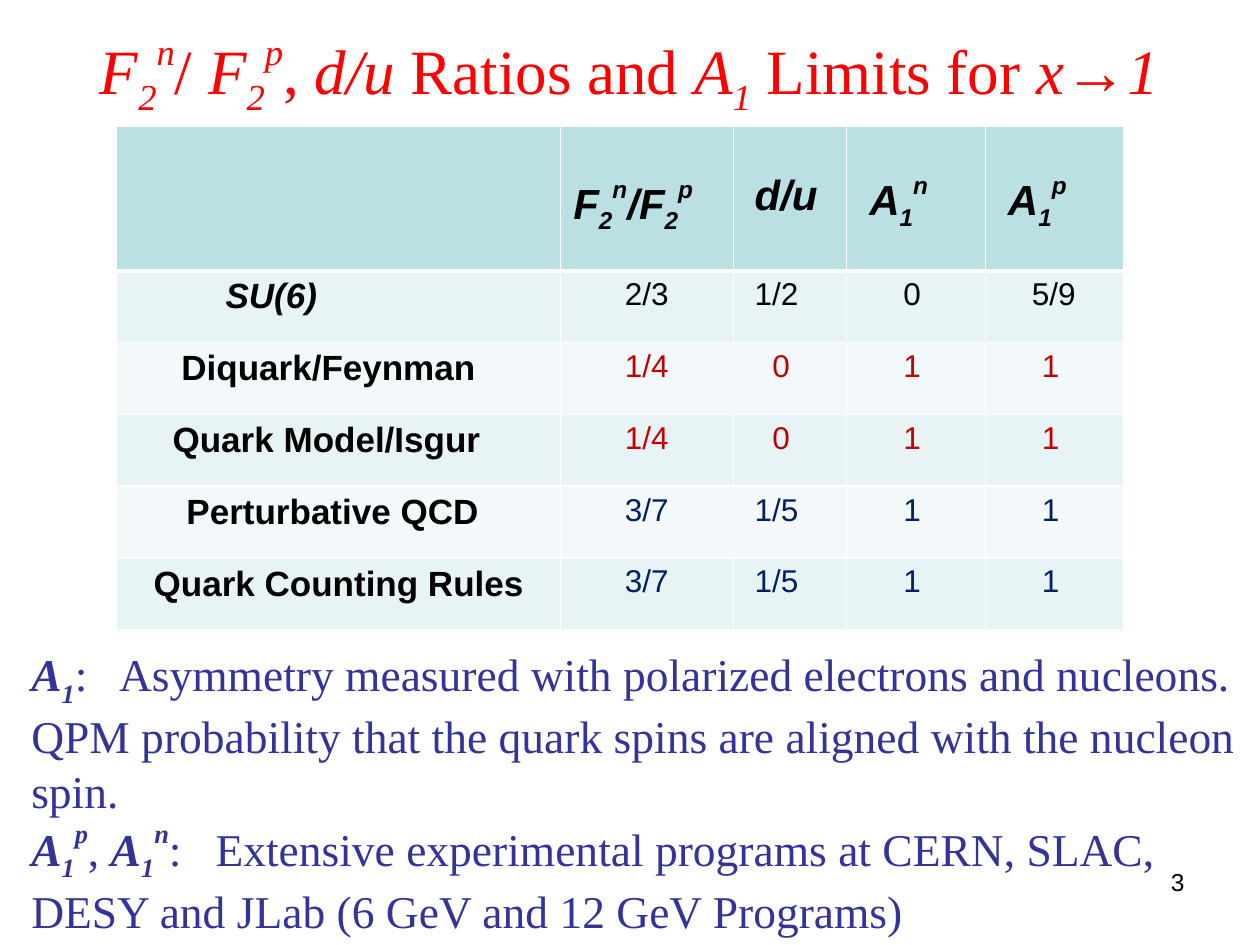
from lxml import etree
from pptx import Presentation
from pptx.dml.color import RGBColor
from pptx.enum.text import MSO_ANCHOR, MSO_AUTO_SIZE, PP_ALIGN
from pptx.oxml.ns import qn
from pptx.util import Inches, Pt

MIDDLE, TOP = MSO_ANCHOR.MIDDLE, MSO_ANCHOR.TOP
LEFT, CENTER, RIGHT = PP_ALIGN.LEFT, PP_ALIGN.CENTER, PP_ALIGN.RIGHT
NO_AUTOFIT = MSO_AUTO_SIZE.NONE
TITLE_ONLY = 5
SERIF, SANS = "Times New Roman", "Arial"
BLACK, WHITE, RED, VIOLET = "000000", "FFFFFF", "FF0000", "333399"
CRIMSON, NAVY = "C00000", "002060"
HEADER_FILL, BANDS = "BBE0E3", ("E7F3F4", "F3F9FA")


def color(value):
    return RGBColor.from_string(value)


def symbol(letter, sub="", sup="", raise_by=50):
    """Spans (text, emphasised, baseline %) of a letter with its indices."""
    spans = [(letter, True, 0), (sub, True, -25), (sup, True, raise_by)]
    return [span for span in spans if span[0]]


def plain(text):
    return [(text, False, 0)]


class SlideBuilder:
    def __init__(self, deck):
        self.slide = deck.slides.add_slide(deck.slide_layouts[TITLE_ONLY])

    def fill_para(self, para, spans, size, font, ink, align=LEFT, bold=False):
        """Fill a paragraph; emphasised spans are italic, and bold if asked."""
        para.alignment = align
        para.font.size, para.font.name = Pt(size), font
        para.font.color.rgb = color(ink)
        for text, emphasised, baseline in spans:
            span = para.add_run()
            span.text = text
            span.font.italic = emphasised
            span.font.bold = bold and emphasised
            if baseline:
                span.font._element.set("baseline", str(baseline * 1000))

    def title(self, area, spans):
        box = self.slide.shapes.title
        box.left, box.top, box.width, box.height = map(Inches, area)
        frame = box.text_frame
        frame.word_wrap, frame.vertical_anchor = True, MIDDLE
        frame.auto_size = NO_AUTOFIT
        self.fill_para(frame.paragraphs[0], spans, 36, SERIF, RED, CENTER)

    def text(self, area, paragraphs, size, font, ink, align=LEFT):
        frame = self.slide.shapes.add_textbox(*map(Inches, area)).text_frame
        frame.word_wrap, frame.vertical_anchor = True, TOP
        for index, spans in enumerate(paragraphs):
            para = frame.add_paragraph() if index else frame.paragraphs[0]
            self.fill_para(para, spans, size, font, ink, align, bold=True)

    def table(self, left, top, widths, heights):
        area = map(Inches, (left, top, sum(widths), sum(heights)))
        table = self.slide.shapes.add_table(len(heights), len(widths), *area).table
        table.first_row = table.horz_banding = False
        for column, width in zip(table.columns, widths):
            column.width = Inches(width)
        for row, height in zip(table.rows, heights):
            row.height = Inches(height)
        return table

    def cell(self, cell, fill, edges):
        """Set the fill and the white edges (left, right, top, bottom, in points)."""
        properties = cell._tc.get_or_add_tcPr()
        for side, width in zip("LRTB", edges):
            line = etree.SubElement(properties, qn(f"a:ln{side}"), w=str(Pt(width)))
            solid = etree.SubElement(line, qn("a:solidFill"))
            etree.SubElement(solid, qn("a:srgbClr"), val=WHITE)
        cell.fill.solid()
        cell.fill.fore_color.rgb = color(fill)

    def cell_text(self, cell, spans, size, ink=BLACK, indent=0.1, drop=0.05, bold=False):
        cell.margin_left, cell.margin_top = Inches(indent), Inches(drop)
        cell.margin_right = 0
        para = cell.text_frame.paragraphs[0]
        self.fill_para(para, spans, size, SANS, ink, bold=True)
        if bold:
            for span in para.runs:
                span.font.bold = True


def main():
    deck = Presentation()
    deck.slide_width, deck.slide_height = Inches(10), Inches(7.5)
    page = SlideBuilder(deck)

    # Title
    page.title((0.33, 0.17, 9.33, 0.83), [
        *symbol("F", "2", "n", 46), *plain("/"), *symbol(" F", "2", "p", 46),
        *plain(", "), *symbol("d/u"), *plain(" Ratios and "), *symbol("A", "1"),
        *plain(" Limits for "), *symbol("x"), *plain("→"), *symbol("1")])

    # Table: header spans with indent and drop, rows with label indent
    headers = [
        ([], 0.1, 0.05),
        (symbol("F", "2", "n") + symbol("/F", "2", "p"), 0.1, 0.4),
        (symbol("d/u"), 0.17, 0.37),
        (symbol("A", "1", "n"), 0.18, 0.37),
        (symbol("A", "1", "p"), 0.18, 0.37)]
    rows = [
        (symbol("SU(6)"), 0.87, BLACK, ("2/3", "1/2", "0", "5/9")),
        (plain("Diquark/Feynman"), 0.52, CRIMSON, ("1/4", "0", "1", "1")),
        (plain("Quark Model/Isgur"), 0.45, CRIMSON, ("1/4", "0", "1", "1")),
        (plain("Perturbative QCD"), 0.56, NAVY, ("3/7", "1/5", "1", "1")),
        (plain("Quark Counting Rules"), 0.3, NAVY, ("3/7", "1/5", "1", "1"))]
    # Value indents per column, for fractions and for single digits
    fraction_indents = (0.51, 0.17, 0.37, 0.37)
    digit_indents = (0.58, 0.31, 0.45, 0.45)

    table = page.table(0.92, 1, (3.53, 1.37, 0.9, 1.1, 1.1), [1.15] + [0.57] * len(rows))
    for column, (spans, indent, drop) in enumerate(headers):
        cell = table.cell(0, column)
        page.cell(cell, HEADER_FILL, (1, 1, 1, 3))
        page.cell_text(cell, spans, 24, indent=indent, drop=drop)
    for index, (label, label_indent, ink, values) in enumerate(rows):
        label_cell, *value_cells = table.rows[index + 1].cells
        for cell in (label_cell, *value_cells):
            page.cell(cell, BANDS[index % 2], (1, 1, 1 if index else 3, 1))
        page.cell_text(label_cell, label, 20, indent=label_indent, bold=True)
        for column, (cell, value) in enumerate(zip(value_cells, values)):
            indents = fraction_indents if "/" in value else digit_indents
            page.cell_text(cell, plain(value), 18, ink, indents[column])

    # Explanation
    page.text((0.15, 5.08, 9.83, 2.29), [
        symbol("A", "1") + plain(
            ":   Asymmetry measured with polarized electrons and nucleons. QPM "
            "probability that the quark spins are aligned with the nucleon spin."),
        symbol("A", "1", "p") + plain(", ") + symbol("A", "1", "n") + plain(
            ":   Extensive experimental programs at CERN, SLAC, DESY and JLab "
            "(6 GeV and 12 GeV Programs)")], 26, SERIF, VIOLET)

    # Page number
    page.text((7.17, 6.83, 2.33, 0.52), [plain("3")], 14, SANS, BLACK, RIGHT)

    deck.save("out.pptx")


if __name__ == "__main__":
    main()
